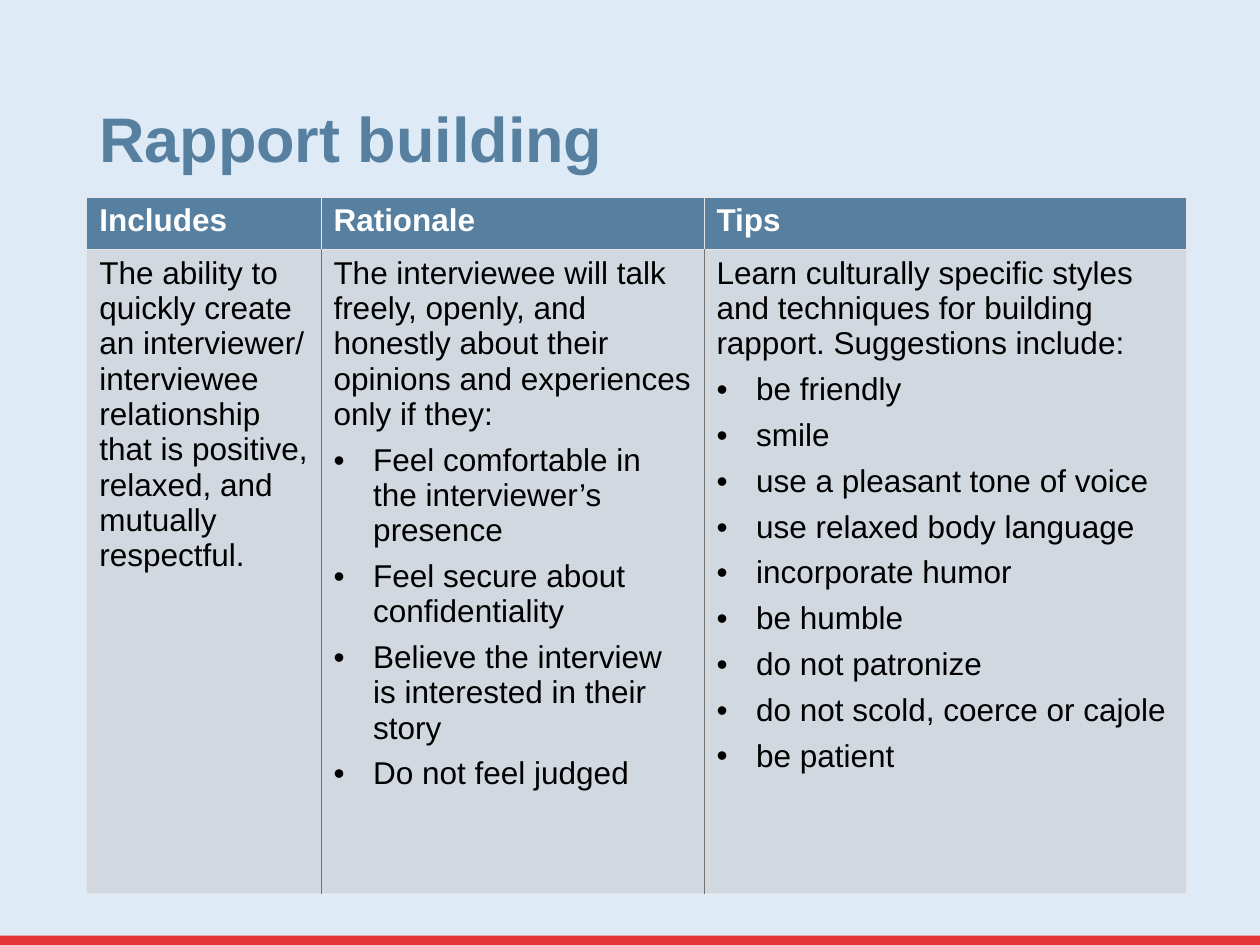
from lxml import etree
from pptx import Presentation
from pptx.dml.color import RGBColor
from pptx.enum import shapes, text
from pptx.oxml.ns import qn
from pptx.util import Cm, Pt

SKY = RGBColor(0xDE, 0xEB, 0xF7)
RED = RGBColor(0xE7, 0x34, 0x39)
STEEL = RGBColor(0x57, 0x7F, 0x9F)
BODY = RGBColor(0xD1, 0xD8, 0xDF)
WHITE = RGBColor(0xFF, 0xFF, 0xFF)
BLACK = RGBColor(0x00, 0x00, 0x00)
PALE = RGBColor(0xE7, 0xE6, 0xE6)
GREY = RGBColor(0x76, 0x71, 0x71)
FONT = "Arial"

# Each column: heading, width in cm, opening text, bullets
COLUMNS = [
    ("Includes", 4.72,
     "The ability to quickly create an interviewer/ interviewee relationship "
     "that is positive, relaxed, and mutually respectful.", []),
    ("Rationale", 7.72,
     "The interviewee will talk freely, openly, and honestly about their "
     "opinions and experiences only if they:",
     ["Feel comfortable in the interviewer’s presence",
      "Feel secure about confidentiality",
      "Believe the interview is interested in their story",
      "Do not feel judged"]),
    ("Tips", 9.72,
     "Learn culturally specific styles and techniques for building rapport. "
     "Suggestions include:",
     ["be friendly", "smile", "use a pleasant tone of voice",
      "use relaxed body language", "incorporate humor", "be humble",
      "do not patronize", "do not scold, coerce or cajole", "be patient"]),
]


def style_font(font, size, color, bold=False):
    font.name, font.size, font.bold = FONT, Pt(size), bold
    font.color.rgb = color


def add_bar(s, x, y, w, h, color):
    sp = s.shapes.add_shape(shapes.MSO_SHAPE.RECTANGLE, x, y, w, h)
    sp.shadow.inherit = False
    sp.fill.solid()
    sp.fill.fore_color.rgb = color
    sp.line.fill.background()


def add_background(s, w, h):
    bar = Cm(0.19)
    add_bar(s, 0, 0, w, h, SKY)
    add_bar(s, 0, h - bar, w, bar, RED)


def add_title(s, x, y, w, h):
    tf = s.shapes.add_textbox(x, y, w, h).text_frame
    tf.word_wrap = True
    tf.vertical_anchor = text.MSO_ANCHOR.BOTTOM
    p = tf.paragraphs[0]
    p.text = "Rapport building"
    p.line_spacing = 0.9
    style_font(p.runs[0].font, 36, STEEL, True)


def set_borders(cell, left, right):
    tc_pr = cell._tc.get_or_add_tcPr()
    for side, color in (("L", left), ("R", right), ("T", PALE), ("B", PALE)):
        ln = etree.SubElement(tc_pr, qn(f"a:ln{side}"), w=str(Pt(0.5)))
        fill = etree.SubElement(ln, qn("a:solidFill"))
        etree.SubElement(fill, qn("a:srgbClr"), val=str(color))


def make_bullet(p):
    p.space_before = Pt(6)
    p_pr = p._p.get_or_add_pPr()
    p_pr.set("marL", str(Cm(0.8)))
    p_pr.set("indent", str(-Cm(0.8)))
    etree.SubElement(p_pr, qn("a:buFont"), typeface=FONT)
    etree.SubElement(p_pr, qn("a:buChar"), char="•")


def fill_cell(cell, lines, fill, color, bold=False):
    cell.fill.solid()
    cell.fill.fore_color.rgb = fill
    tf = cell.text_frame
    for i, line in enumerate(lines):
        p = tf.add_paragraph() if i else tf.paragraphs[0]
        p.text = line
        if i:
            make_bullet(p)
        style_font(p.runs[0].font, 18, color, bold)


def add_rapport_table(s, x, y, w, h):
    header = Cm(1.06)
    last = len(COLUMNS) - 1
    table = s.shapes.add_table(2, len(COLUMNS), x, y, w, h).table
    table.rows[0].height = header
    table.rows[1].height = h - header
    for i, (heading, width, intro, bullets) in enumerate(COLUMNS):
        table.columns[i].width = Cm(width)
        head, body = table.cell(0, i), table.cell(1, i)
        set_borders(head, PALE, PALE)
        set_borders(body, GREY if i else PALE, GREY if i < last else PALE)
        fill_cell(head, [heading], STEEL, WHITE, True)
        fill_cell(body, [intro] + bullets, BODY, BLACK)


def main():
    prs = Presentation()
    prs.slide_width, prs.slide_height = Cm(25.4), Cm(19.05)
    s = prs.slides.add_slide(prs.slide_layouts[6])
    add_background(s, prs.slide_width, prs.slide_height)
    add_title(s, Cm(1.75), Cm(1.47), Cm(21.9), Cm(2.21))
    add_rapport_table(s, Cm(1.75), Cm(3.97), Cm(22.16), Cm(14.04))
    prs.save("out.pptx")


if __name__ == "__main__":
    main()
